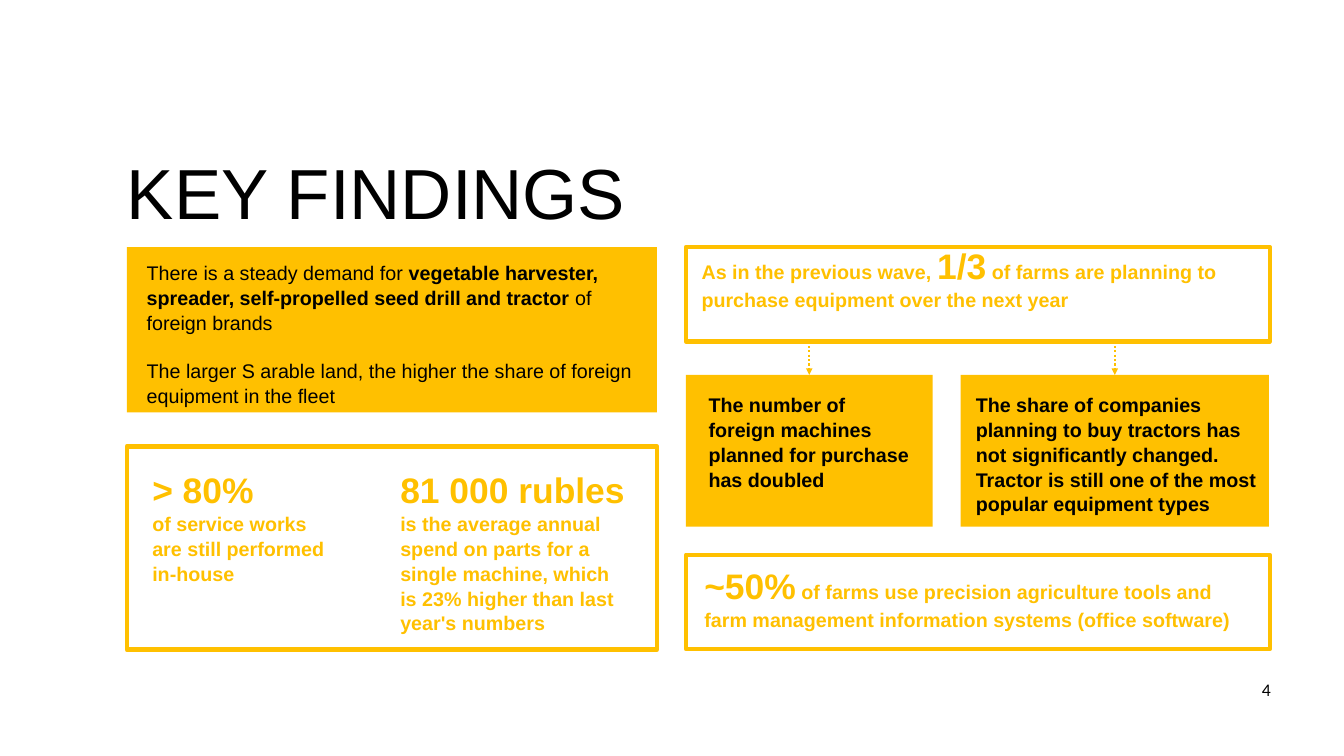
from lxml import etree
from pptx import Presentation
from pptx.dml.color import RGBColor
from pptx.enum.dml import MSO_LINE
from pptx.enum.shapes import MSO_CONNECTOR, MSO_SHAPE
from pptx.enum.text import MSO_ANCHOR, MSO_AUTO_SIZE, PP_ALIGN
from pptx.oxml.ns import qn
from pptx.util import Cm, Pt

ROUNDED = MSO_SHAPE.ROUNDED_RECTANGLE
STRAIGHT = MSO_CONNECTOR.STRAIGHT
DOTTED = MSO_LINE.ROUND_DOT
TOP = MSO_ANCHOR.TOP
LEFT = PP_ALIGN.LEFT
NO_AUTOFIT = MSO_AUTO_SIZE.NONE

COLORS = {"amber": "FFC000", "black": "000000"}
BODY, FIGURE, HEADING = 20, 36, 72

# Boxes are (left, top, width, height) in centimetres.
TITLE = ("KEY FINDINGS", (4.55, 5.16, 25.48, 3.07))
PAGE_NUMBER = ("4", (45.24, 24.33, 0.5, 0.76))

# Each run is (text, size, bold); each paragraph is a list of runs.
# Each panel is (box, filled, [(text box, paragraphs), ...]).
PANELS = {
    "demand": ((4.55, 8.86, 19, 5.92), True, [
        ((5.26, 9.32, 17.78, 5.13), [
            [("There is a steady demand for ", BODY, False),
             ("vegetable harvester, spreader, self-propelled seed drill and tractor ", BODY, True),
             ("of foreign brands", BODY, False)],
            [("The larger S arable land, the higher the share of foreign equipment in the fleet",
              BODY, False)],
        ]),
    ]),
    "service": ((4.55, 16, 19, 7.29), False, [
        ((5.46, 16.71, 6.58, 4.11), [
            [("> 80%", FIGURE, True)],
            [("of service works are still performed in-house", BODY, True)],
        ]),
        ((14.35, 16.71, 8.23, 5.82), [
            [("81 000 rubles", FIGURE, True)],
            [("is the average annual spend on parts for a single machine, "
              "which is 23% higher than last year's numbers", BODY, True)],
        ]),
    ]),
    "plans": ((24.59, 8.86, 20.93, 3.38), False, [
        ((25.15, 8.69, 19.76, 2.39), [
            [("As in the previous wave, ", BODY, True),
             ("1/3", FIGURE, True),
             (" of farms are planning to purchase equipment over the next year", BODY, True)],
        ]),
    ]),
    "foreign machines": ((24.59, 13.44, 8.84, 5.44), True, [
        ((25.4, 14.05, 7.44, 3.43), [
            [("The number of foreign machines planned for purchase has doubled", BODY, True)],
        ]),
    ]),
    "tractors": ((34.44, 13.44, 11.05, 5.44), True, [
        ((34.98, 14.05, 10.41, 4.27), [
            [("The share of companies planning to buy tractors has not significantly changed. "
              "Tractor is still one of the most popular equipment types", BODY, True)],
        ]),
    ]),
    "precision tools": ((24.59, 19.89, 20.93, 3.38), False, [
        ((25.25, 20.14, 19.66, 2.39), [
            [("~50%", FIGURE, True),
             (" of farms use precision agriculture tools and farm management "
              "information systems (office software)", BODY, True)],
        ]),
    ]),
}
ARROWS = [("plans", "foreign machines"), ("plans", "tractors")]


def rgb(name):
    return RGBColor.from_string(COLORS[name])


def lengths(box):
    return [Cm(value) for value in box]


def write_text(shape, paragraphs, color="black", font="Arial", spacing=1.05, gap=0):
    """Fill a shape with paragraphs of (text, size, bold) runs; gap is in points."""
    frame = shape.text_frame
    frame.word_wrap = True
    frame.auto_size = NO_AUTOFIT
    frame.vertical_anchor = TOP
    frame.margin_left = frame.margin_right = frame.margin_top = frame.margin_bottom = 0
    for index, runs in enumerate(paragraphs):
        paragraph = frame.add_paragraph() if index else frame.paragraphs[0]
        paragraph.alignment = LEFT
        paragraph.line_spacing = spacing
        paragraph.space_before = Pt(gap if index else 0)
        for text, size, bold in runs:
            run = paragraph.add_run()
            run.text = text
            run.font.name = font
            run.font.size = Pt(size)
            run.font.bold = bold
            run.font.color.rgb = rgb(color)


def add_panel(slide, box, filled):
    panel = slide.shapes.add_shape(ROUNDED, *lengths(box))
    panel.adjustments[0] = 0
    panel.shadow.inherit = False
    if filled:
        panel.fill.solid()
        panel.fill.fore_color.rgb = rgb("amber")
        panel.line.fill.background()
    else:
        panel.fill.background()
        panel.line.color.rgb = rgb("amber")
        panel.line.width = Pt(4.5)


def add_arrow(slide, source, target):
    """Drop a dotted arrow from the source's bottom to the target's top centre."""
    center = target[0] + target[2] / 2
    ends = (center, source[1] + source[3], center, target[1])
    arrow = slide.shapes.add_connector(STRAIGHT, *lengths(ends))
    arrow.line.color.rgb = rgb("amber")
    arrow.line.width = Pt(2.25)
    arrow.line.dash_style = DOTTED
    properties = arrow.element.spPr
    line = properties.find(qn("a:ln"))
    etree.SubElement(line, qn("a:tailEnd"), type="triangle")
    etree.SubElement(properties, qn("a:effectLst"))


def main():
    presentation = Presentation()
    presentation.slide_width = Cm(48.18)
    presentation.slide_height = Cm(27.1)
    slide = presentation.slides.add_slide(presentation.slide_layouts[5])

    heading, box = TITLE
    title = slide.shapes.title
    title.left, title.top, title.width, title.height = lengths(box)
    write_text(title, [[(heading, HEADING, False)]])

    for box, filled, texts in PANELS.values():
        add_panel(slide, box, filled)
        color = "black" if filled else "amber"
        gap = 24 if filled else 0
        for text_box, paragraphs in texts:
            shape = slide.shapes.add_textbox(*lengths(text_box))
            write_text(shape, paragraphs, color=color, gap=gap)

    for source, target in ARROWS:
        add_arrow(slide, PANELS[source][0], PANELS[target][0])

    number, box = PAGE_NUMBER
    shape = slide.shapes.add_textbox(*lengths(box))
    write_text(shape, [[(number, 18, False)]], font="Calibri", spacing=1)

    presentation.save("out.pptx")


if __name__ == "__main__":
    main()
